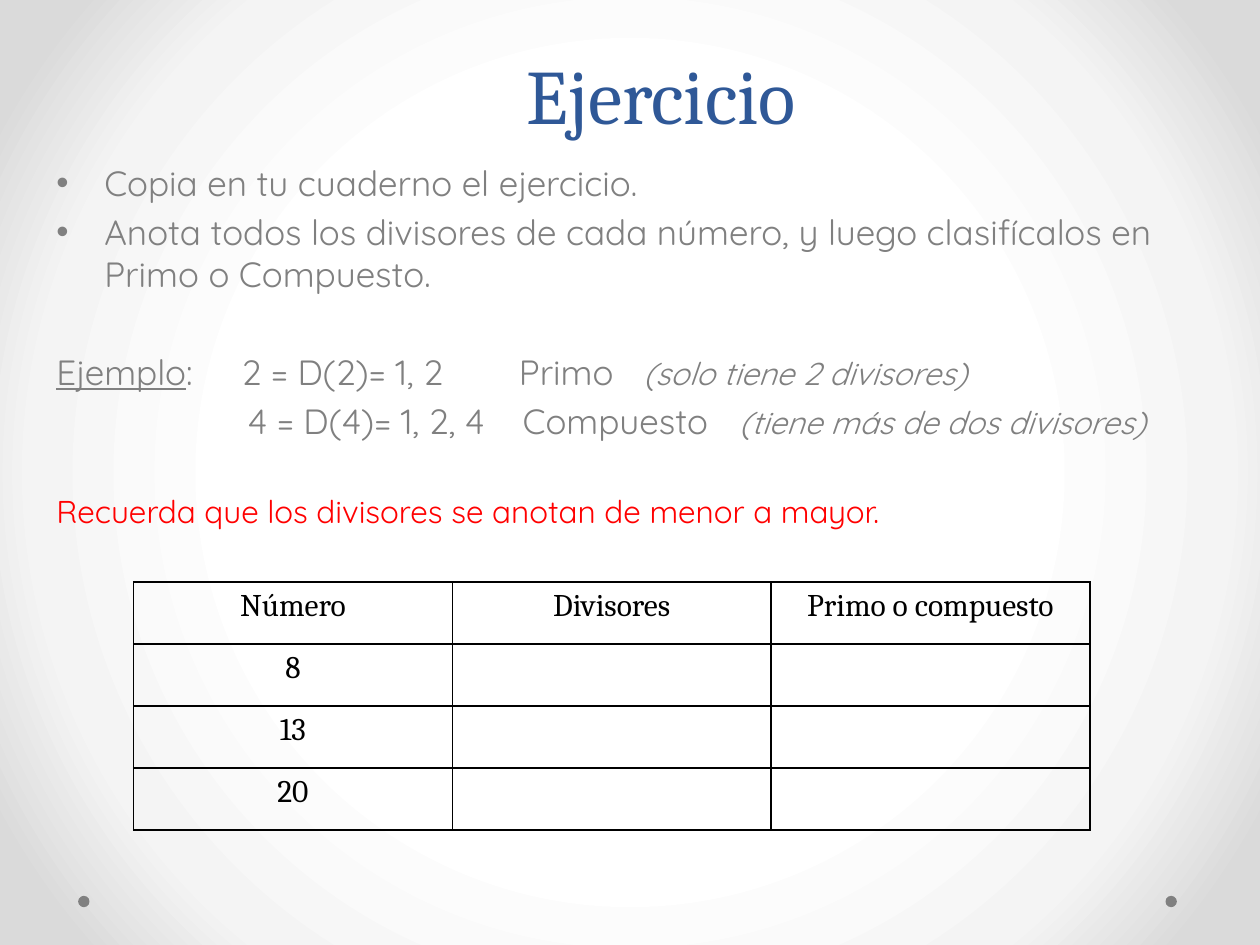
from dataclasses import dataclass

from lxml.etree import SubElement
from pptx import Presentation
from pptx.dml.color import RGBColor
from pptx.enum.shapes import MSO_SHAPE
from pptx.enum.text import MSO_ANCHOR, PP_ALIGN
from pptx.oxml import parse_xml
from pptx.oxml.ns import nsdecls, qn
from pptx.util import Inches, Pt

BLUE = RGBColor(0x2F, 0x58, 0x97)
GRAY = RGBColor(0x80, 0x80, 0x80)
RED = RGBColor(0xFF, 0x00, 0x00)
BLACK = RGBColor(0x00, 0x00, 0x00)
SERIF, SANS = "Cambria", "Quicksand"


@dataclass
class Span:
    text: str
    size: int = 20
    color: RGBColor = GRAY
    font: str = SANS
    italic: bool = False
    underline: bool = False


@dataclass
class Line:
    spans: list[Span]
    before: int = 4
    bullet: bool = False
    tabs: tuple[float, ...] = ()


def add_span(p, span: Span) -> None:
    r = p.add_run()
    r.text = span.text
    r.font.name = span.font
    r.font.size = Pt(span.size)
    r.font.color.rgb = span.color
    r.font.italic = span.italic
    r.font.underline = span.underline


def add_line(p, line: Line) -> None:
    p.space_before = Pt(line.before)
    pPr = p._p.get_or_add_pPr()
    if line.bullet:
        pPr.set("marL", str(Inches(0.38)))
        pPr.set("indent", str(-Inches(0.38)))
        SubElement(pPr, qn("a:buFont"), typeface="Arial")
        SubElement(pPr, qn("a:buChar"), char="•")
    if line.tabs:
        tab_list = SubElement(pPr, qn("a:tabLst"))
        for pos in line.tabs:
            SubElement(tab_list, qn("a:tab"), pos=str(Inches(pos)), algn="l")
    for span in line.spans:
        add_span(p, span)


def add_text_frame(s, left: float, top: float, width: float, height: float):
    box = s.shapes.add_textbox(Inches(left), Inches(top), Inches(width), Inches(height))
    box.text_frame.word_wrap = True
    return box.text_frame


def set_background(s, stops: list[tuple[int, str]]) -> None:
    gs = "".join(f'<a:gs pos="{pos * 1000}"><a:srgbClr val="{color}"/></a:gs>'
                 for pos, color in stops)
    s._element.cSld.insert(0, parse_xml(
        f'<p:bg {nsdecls("p", "a")}><p:bgPr><a:gradFill rotWithShape="1">'
        f'<a:gsLst>{gs}</a:gsLst><a:path path="circle">'
        '<a:fillToRect l="50000" t="50000" r="50000" b="50000"/></a:path>'
        '</a:gradFill><a:effectLst/></p:bgPr></p:bg>'))


def add_dot(s, left: float) -> None:
    sp = s.shapes.add_shape(MSO_SHAPE.OVAL, Inches(left), Inches(7.11),
                            Inches(0.09), Inches(0.09))
    sp.shadow.inherit = False
    sp.fill.solid()
    sp.fill.fore_color.rgb = GRAY
    sp.line.fill.background()


def set_borders(cell) -> None:
    tcPr = cell._tc.get_or_add_tcPr()
    for i, side in enumerate(("lnL", "lnR", "lnT", "lnB")):
        tcPr.insert(i, parse_xml(
            f'<a:{side} {nsdecls("a")} w="{Pt(1)}"><a:solidFill>'
            f'<a:srgbClr val="{BLACK}"/></a:solidFill></a:{side}>'))


def add_grid(s, rows: list[tuple[str, ...]]) -> None:
    table = s.shapes.add_table(len(rows), 3, Inches(1.06), Inches(4.62),
                               Inches(7.59), Inches(1.97)).table
    table.first_row = False
    table.horz_banding = False
    for i, row in enumerate(rows):
        for j, text in enumerate(row):
            cell = table.cell(i, j)
            cell.fill.background()
            set_borders(cell)
            if text:
                p = cell.text_frame.paragraphs[0]
                p.alignment = PP_ALIGN.CENTER
                add_span(p, Span(text, 18, BLACK, SERIF))


LINES = [
    Line([Span("Copia en tu cuaderno el ejercicio.")], bullet=True),
    Line([Span("Anota todos los divisores de cada número, y luego clasifícalos "
               "en Primo o Compuesto.")], bullet=True),
    Line([Span("Ejemplo", underline=True),
          Span(":\t2 = D(2)= 1, 2\tPrimo\t"),
          Span("(solo tiene 2 divisores)", 18, italic=True)],
         before=32, tabs=(1.47, 3.67, 4.66)),
    Line([Span("\t4 = D(4)= 1, 2, 4\tCompuesto\t"),
          Span("(tiene más de dos divisores)", 18, italic=True)],
         tabs=(1.52, 3.7, 5.42)),
    Line([Span("Recuerda que los divisores se anotan de menor a mayor.", 18, RED)],
         before=29),
]

ROWS = [("Número", "Divisores", "Primo o compuesto"),
        ("8", "", ""), ("13", "", ""), ("20", "", "")]


def main() -> None:
    prs = Presentation()
    prs.slide_width, prs.slide_height = Inches(10), Inches(7.5)
    s = prs.slides.add_slide(prs.slide_layouts[6])

    # Background and corner dots
    set_background(s, [(50, "FFFFFF"), (76, "F4F4F4"), (92, "DADADA")])
    for left in (9.25, 0.62):
        add_dot(s, left)

    # Title
    tf = add_text_frame(s, 0.75, 0.29, 9, 0.87)
    tf.vertical_anchor = MSO_ANCHOR.BOTTOM
    p = tf.paragraphs[0]
    p.alignment = PP_ALIGN.CENTER
    p.line_spacing = Pt(58)
    add_span(p, Span("Ejercicio", 44, BLUE, SERIF))

    # Instructions and example
    tf = add_text_frame(s, 0.35, 1.23, 9.37, 5.83)
    for i, line in enumerate(LINES):
        add_line(tf.add_paragraph() if i else tf.paragraphs[0], line)

    # Exercise table
    add_grid(s, ROWS)
    prs.save("out.pptx")


if __name__ == "__main__":
    main()
